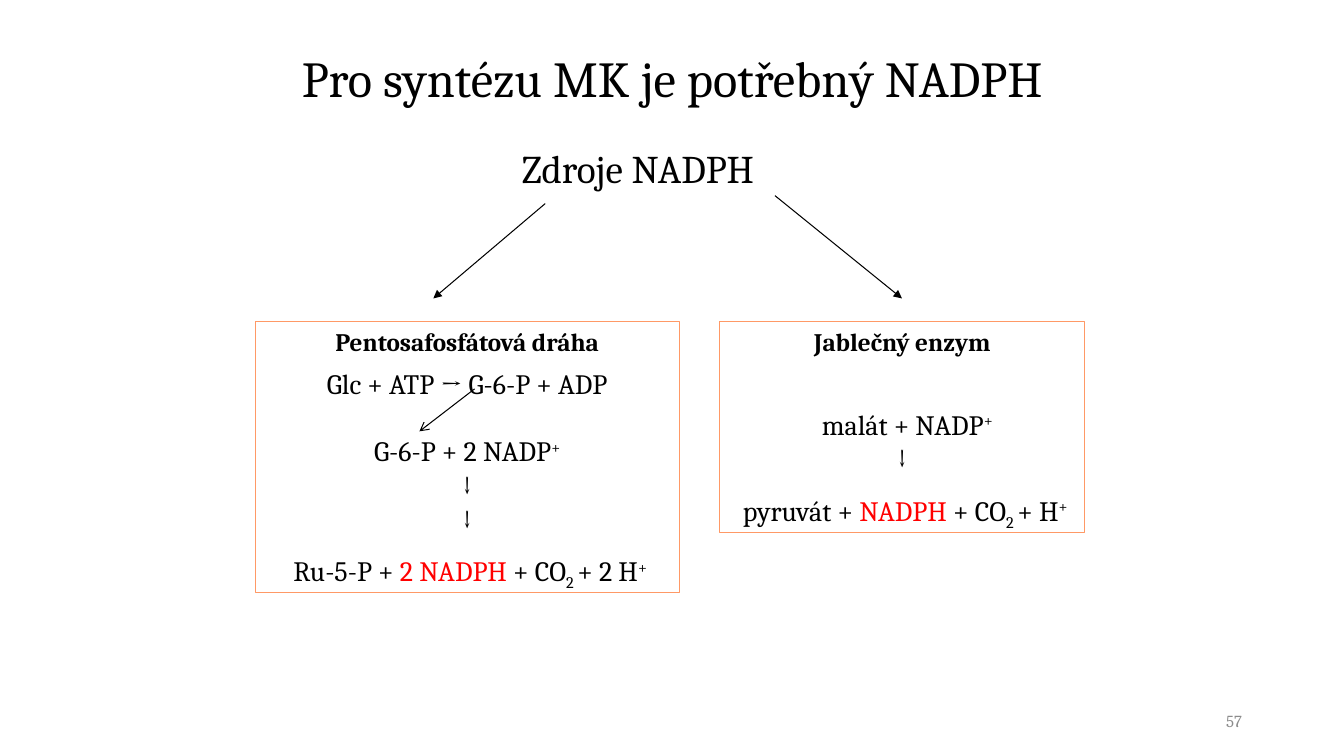
from dataclasses import dataclass

import pptx
import pptx.dml.color
import pptx.enum.shapes
import pptx.enum.text
import pptx.oxml
import pptx.oxml.ns
import pptx.util

Cm = pptx.util.Cm
Pt = pptx.util.Pt
RGBColor = pptx.dml.color.RGBColor
Align = pptx.enum.text.PP_ALIGN
Anchor = pptx.enum.text.MSO_ANCHOR


@dataclass(frozen=True)
class Theme:
    font: str = "Cambria"
    text: RGBColor = RGBColor(0, 0, 0)
    highlight: RGBColor = RGBColor(255, 0, 0)
    frame: RGBColor = RGBColor(0xFF, 0x99, 0x66)
    muted: RGBColor = RGBColor(0x8C, 0x8C, 0x8C)
    title_size: int = 36
    subtitle_size: int = 28
    heading_size: int = 18
    body_size: int = 20
    number_size: int = 12
    line_width: float = 0.75


THEME = Theme()
SUPERSCRIPT = {"baseline": 30}
SUBSCRIPT = {"baseline": -25}
HIGHLIGHT = {"color": THEME.highlight}


def write_paragraph(paragraph, *parts, size=THEME.body_size, color=THEME.text, bold=False,
                    align=Align.CENTER, spacing=None, before=None, indent=0):
    """Each part is a string or a (string, format) pair, with color or baseline."""
    paragraph.alignment = align
    if spacing:
        paragraph.line_spacing = spacing
    if before:
        paragraph.space_before = Pt(before)
    if indent:
        paragraph._p.get_or_add_pPr().set("marL", str(Cm(indent)))
    for part in parts:
        text, style = (part, {}) if isinstance(part, str) else part
        run = paragraph.add_run()
        run.text = text
        run.font.name = THEME.font
        run.font.size = Pt(size)
        run.font.bold = bold
        run.font.color.rgb = style.get("color", color)
        if "baseline" in style:
            run._r.get_or_add_rPr().set("baseline", str(style["baseline"] * 1000))


def add_label(slide, box, text, anchor=Anchor.TOP, **text_format):
    shape = slide.shapes.add_textbox(*map(Cm, box))
    shape.text_frame.word_wrap = True
    shape.text_frame.vertical_anchor = anchor
    write_paragraph(shape.text_frame.paragraphs[0], text, **text_format)


def add_arrow(slide, start, end, head="triangle"):
    arrow = slide.shapes.add_connector(
        pptx.enum.shapes.MSO_CONNECTOR.STRAIGHT, *map(Cm, (*start, *end)))
    arrow.line.color.rgb = THEME.text
    arrow.line.width = Pt(THEME.line_width)
    line = arrow.line._get_or_add_ln()
    tail = pptx.oxml.parse_xml(
        f'<a:tailEnd {pptx.oxml.ns.nsdecls("a")} type="{head}"/>')
    line.append(tail)
    effects = pptx.oxml.parse_xml(f'<a:effectLst {pptx.oxml.ns.nsdecls("a")}/>')
    arrow._element.spPr.append(effects)


def add_reaction_box(slide, box, heading, steps):
    """Steps are (parts, paragraph format) pairs below the bold heading."""
    shape = slide.shapes.add_shape(
        pptx.enum.shapes.MSO_SHAPE.RECTANGLE, *map(Cm, box))
    shape.shadow.inherit = False
    shape.fill.background()
    shape.line.color.rgb = THEME.frame
    shape.line.width = Pt(THEME.line_width)
    frame = shape.text_frame
    frame.word_wrap = True
    frame.vertical_anchor = Anchor.TOP
    write_paragraph(frame.paragraphs[0], heading, size=THEME.heading_size, bold=True)
    for parts, paragraph_format in steps:
        write_paragraph(frame.add_paragraph(), *parts, **paragraph_format)


def add_pentose_pathway(slide, box):
    add_reaction_box(slide, box, "Pentosafosfátová dráha", [
        (["Glc + ATP → G-6-P + ADP"], {"spacing": 1.3}),
        (["G-6-P + 2 NADP", ("+", SUPERSCRIPT)], {"spacing": 2.0}),
        (["↓"], {}),
        (["↓"], {}),
        (["Ru-5-P + ", ("2 NADPH", HIGHLIGHT), " + CO", ("2 ", SUBSCRIPT),
          "+ 2 H", ("+", SUPERSCRIPT)], {"spacing": 1.5, "indent": 0.15}),
    ])
    left, top = box[:2]
    add_arrow(slide, (left + 5.53, top + 1.7), (left + 4.14, top + 2.77), head="arrow")


def add_malic_enzyme(slide, box):
    add_reaction_box(slide, box, "Jablečný enzym", [
        (["malát + NADP", ("+", SUPERSCRIPT)],
         {"spacing": 1.5, "before": 24, "indent": 0.25}),
        (["↓"], {}),
        (["pyruvát + ", ("NADPH", HIGHLIGHT), " + CO", ("2 ", SUBSCRIPT),
          "+ H", ("+", SUPERSCRIPT)], {"spacing": 1.5, "indent": 0.15}),
    ])


def add_sources(slide, box):
    """Heading of the two sources with an arrow to each."""
    left, top, width, height = box
    add_label(slide, box, "Zdroje NADPH", size=THEME.subtitle_size, align=Align.LEFT)
    bottom = top + height
    add_arrow(slide, (left + 0.84, bottom + 0.17), (left - 1.98, bottom + 2.56))
    add_arrow(slide, (left + width - 0.63, bottom - 0.03),
              (left + width + 2.57, bottom + 2.56))


def main():
    presentation = pptx.Presentation()
    presentation.slide_width = Cm(33.87)
    presentation.slide_height = Cm(19.05)
    slide = presentation.slides.add_slide(presentation.slide_layouts[6])
    add_label(slide, (4.24, 1.07, 25.4, 1.8), "Pro syntézu MK je potřebný NADPH",
              size=THEME.title_size)
    add_sources(slide, (12.9, 3.51, 7.26, 1.45))
    add_pentose_pathway(slide, (6.43, 8.1, 10.69, 6.83))
    add_malic_enzyme(slide, (18.14, 8.1, 9.2, 5.31))
    add_label(slide, (23.93, 17.65, 7.62, 1.02), "57", anchor=Anchor.MIDDLE,
              size=THEME.number_size, color=THEME.muted, align=Align.RIGHT)
    presentation.save("out.pptx")


if __name__ == "__main__":
    main()
